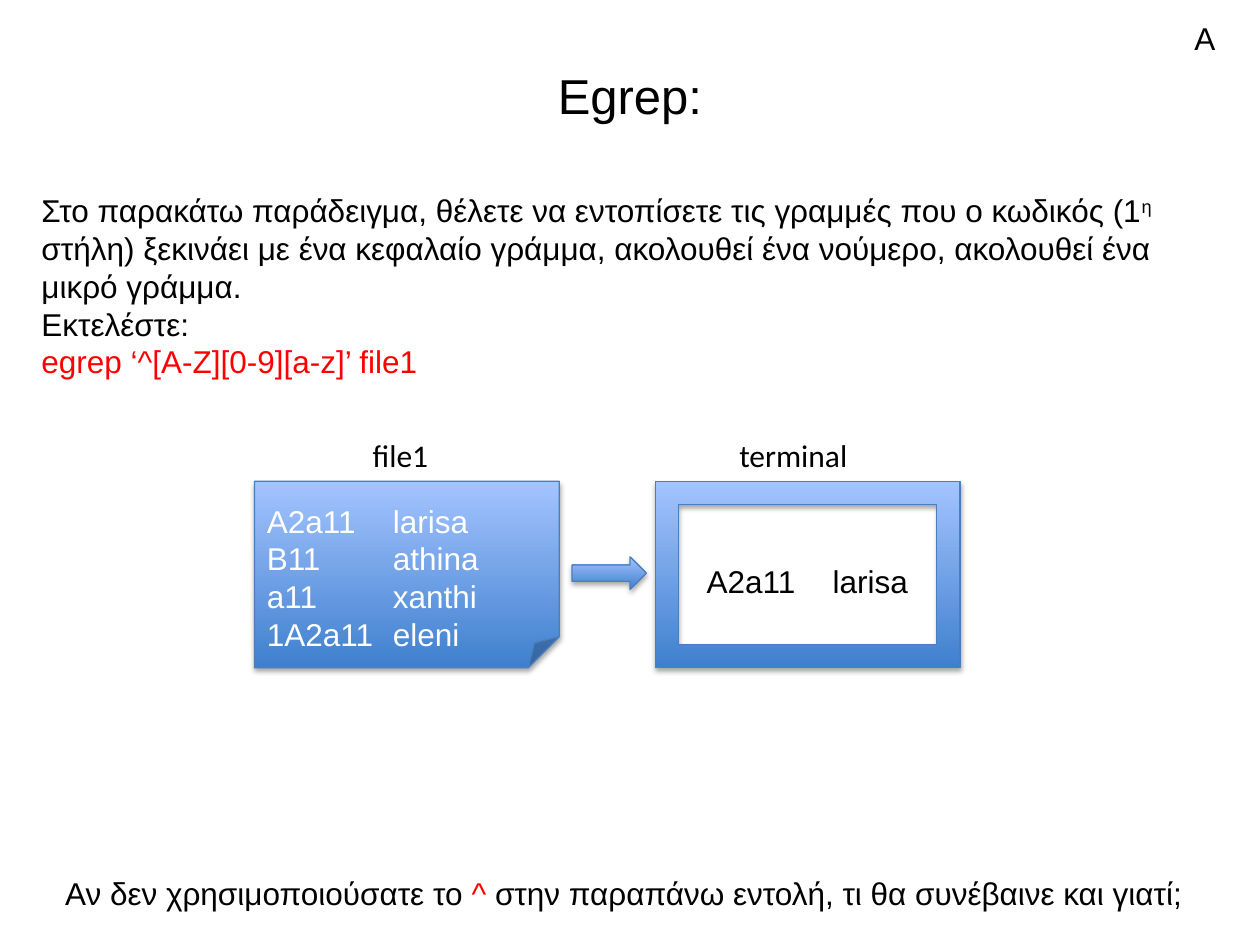
from lxml import etree
from pptx import Presentation
from pptx.dml.color import RGBColor
from pptx.enum.shapes import MSO_SHAPE
from pptx.enum.text import MSO_ANCHOR, PP_ALIGN
from pptx.oxml.ns import qn
from pptx.util import Pt

BLACK = RGBColor(0x00, 0x00, 0x00)
WHITE = RGBColor(0xFF, 0xFF, 0xFF)
RED = RGBColor(0xFF, 0x00, 0x00)
BLUE_DARK = RGBColor(0x3F, 0x80, 0xCE)
BLUE_LIGHT = RGBColor(0xA4, 0xC4, 0xFF)
BLUE_LINE = RGBColor(0x4B, 0x7E, 0xBC)
LEFT, CENTER, JUSTIFY = PP_ALIGN.LEFT, PP_ALIGN.CENTER, PP_ALIGN.JUSTIFY
MIDDLE = MSO_ANCHOR.MIDDLE
FOLDED, ARROW, FRAME = MSO_SHAPE.FOLDED_CORNER, MSO_SHAPE.RIGHT_ARROW, MSO_SHAPE.FRAME

# Content: a paragraph is a list of (text, colour, superscript) runs
TITLE = [[("Egrep:", BLACK, False)]]
TASK = [
    [("Στο παρακάτω παράδειγμα, θέλετε να εντοπίσετε τις γραμμές που ο κωδικός (1", BLACK, False),
     ("η", BLACK, True),
     (" στήλη) ξεκινάει με ένα κεφαλαίο γράμμα, ακολουθεί ένα νούμερο, "
      "ακολουθεί ένα μικρό γράμμα.", BLACK, False)],
    [("Εκτελέστε:", BLACK, False)],
    [("egrep ‘^[A-Z][0-9][a-z]’ file1", RED, False)],
]
FILE_ROWS = [("A2a11", "larisa"), ("B11", "athina"), ("a11", "xanthi"), ("1A2a11", "eleni")]
RESULT_ROWS = FILE_ROWS[:1]
QUESTION = [[("Αν δεν χρησιμοποιούσατε το ", BLACK, False), ("^ ", RED, False),
             ("στην παραπάνω εντολή, τι θα συνέβαινε και γιατί;", BLACK, False)]]
MARK = [[("Α", BLACK, False)]]

# Layout in points
PANEL_TOP, PANEL_W, PANEL_H = 275, 174.2, 106.6
FILE_X, TERMINAL_X = 145.4, 374.4
LABEL_TOP, LINE_BOX_H = 245.5, 29
TOP_INSET = 24.3  # one text line above the first paragraph
COLUMN_TAB = 72


def rows_to_paragraphs(rows, color):
    return [[("\t".join(row), color, False)] for row in rows]


def write(tf, paragraphs, size=18, font="Arial", align=LEFT, tab=None):
    for i, runs in enumerate(paragraphs):
        p = tf.paragraphs[0] if i == 0 else tf.add_paragraph()
        p.alignment = align
        if tab:
            tabs = etree.SubElement(p._p.get_or_add_pPr(), qn("a:tabLst"))
            etree.SubElement(tabs, qn("a:tab"), pos=str(Pt(tab)), algn="l")
        p.font.size, p.font.name = Pt(size), font
        for text, color, raised in runs:
            r = p.add_run()
            r.text = text
            r.font.size, r.font.name = Pt(size), font
            r.font.color.rgb = color
            if raised:
                r._r.get_or_add_rPr().set("baseline", "30000")


def add_text(s, box, paragraphs, wrap=True, **style):
    tf = s.shapes.add_textbox(*map(Pt, box)).text_frame
    tf.word_wrap = wrap
    write(tf, paragraphs, **style)
    return tf


def add_blue_shape(s, kind, box):
    sp = s.shapes.add_shape(kind, *map(Pt, box))
    sp.fill.gradient()
    sp.fill.gradient_angle = 90
    for stop, color in zip(sp.fill.gradient_stops, (BLUE_DARK, BLUE_LIGHT)):
        stop.color.rgb = color
    sp.line.color.rgb = BLUE_LINE
    sp.line.width = Pt(0.75)
    # Soft shadow straight below
    sp.shadow.inherit = False
    effects = sp._element.spPr.find(qn("a:effectLst"))
    shadow = etree.SubElement(effects, qn("a:outerShdw"), blurRad=str(Pt(3.1)),
                              dist=str(Pt(1.8)), dir="5400000", rotWithShape="0")
    black = etree.SubElement(shadow, qn("a:srgbClr"), val="000000")
    etree.SubElement(black, qn("a:alpha"), val="35000")
    return sp


def main():
    prs = Presentation()
    prs.slide_width, prs.slide_height = Pt(720), Pt(540)
    s = prs.slides.add_slide(prs.slide_layouts[6])

    # Title and task
    tf = add_text(s, (36, 33.1, 648, 42.5), TITLE, size=28, align=CENTER)
    tf.vertical_anchor = MIDDLE
    tf = add_text(s, (16.6, 85, 683.3, 138.2), TASK)
    tf.margin_top = Pt(TOP_INSET)

    # Input file
    tf = add_blue_shape(s, FOLDED, (FILE_X, PANEL_TOP, PANEL_W, PANEL_H)).text_frame
    tf.vertical_anchor = MIDDLE
    tf.margin_top = Pt(TOP_INSET)
    write(tf, rows_to_paragraphs(FILE_ROWS, WHITE), align=JUSTIFY, tab=COLUMN_TAB)

    # Arrow and terminal with the result
    add_blue_shape(s, ARROW, (326.9, 318.2, 42.5, 18.7))
    add_blue_shape(s, FRAME, (TERMINAL_X, PANEL_TOP, PANEL_W, PANEL_H))
    add_text(s, (396.7, 317.5, 141.8, LINE_BOX_H),
             rows_to_paragraphs(RESULT_ROWS, BLACK), tab=COLUMN_TAB)

    # Panel labels
    for label, x, width in (("file1", 205.9, 46.8), ("terminal", 415.4, 77)):
        add_text(s, (x, LABEL_TOP, width, LINE_BOX_H), [[(label, BLACK, False)]],
                 wrap=False, font="Calibri")

    # Closing question and corner mark
    add_text(s, (30.2, 496.1, 667.4, LINE_BOX_H), QUESTION)
    add_text(s, (675.4, 7.2, 36, LINE_BOX_H), MARK)

    prs.save("out.pptx")


if __name__ == "__main__":
    main()
